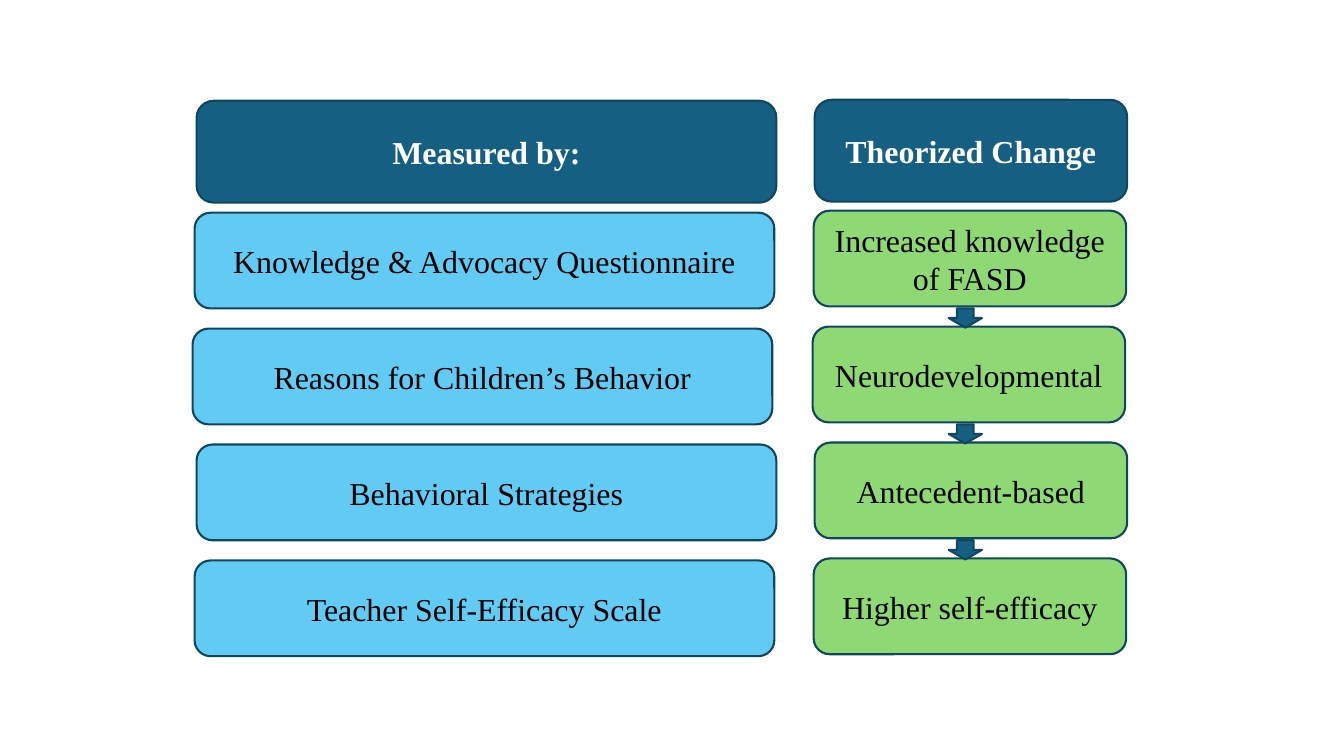
from pptx import Presentation
from pptx.dml.color import RGBColor
from pptx.enum.shapes import MSO_SHAPE
from pptx.enum.text import MSO_ANCHOR, PP_ALIGN
from pptx.util import Pt

ROUNDED = MSO_SHAPE.ROUNDED_RECTANGLE
DOWN_ARROW = MSO_SHAPE.DOWN_ARROW
TOP = MSO_ANCHOR.TOP
MIDDLE = MSO_ANCHOR.MIDDLE
CENTER = PP_ALIGN.CENTER

PX = 9144
TEAL = RGBColor(0x15, 0x60, 0x82)
OUTLINE = RGBColor(0x10, 0x47, 0x60)
SKY = RGBColor(0x61, 0xCB, 0xF4)
GREEN = RGBColor(0x8E, 0xD9, 0x73)
WHITE = RGBColor(0xFF, 0xFF, 0xFF)
BLACK = RGBColor(0x00, 0x00, 0x00)

HEADER_HEIGHT = 101
ROW_HEIGHT = 95
ROW_PITCH = 115

presentation = Presentation()
presentation.slide_width = 1333 * PX
presentation.slide_height = 750 * PX
slide = presentation.slides.add_slide(presentation.slide_layouts[6])


def add_filled_shape(kind, left, top, width, height, color):
    shape = slide.shapes.add_shape(kind, left * PX, top * PX, width * PX, height * PX)
    shape.shadow.inherit = False
    shape.fill.solid()
    shape.fill.fore_color.rgb = color
    shape.line.color.rgb = OUTLINE
    shape.line.width = Pt(1.5)
    return shape


def add_box(left, top, width, height, color, text, font_color, bold=False, anchor=MIDDLE):
    shape = add_filled_shape(ROUNDED, left, top, width, height, color)
    frame = shape.text_frame
    frame.word_wrap = True
    frame.vertical_anchor = anchor
    paragraph = frame.paragraphs[0]
    paragraph.alignment = CENTER
    paragraph.space_after = Pt(5.7)
    run = paragraph.add_run()
    run.text = text
    run.font.name = "Times New Roman"
    run.font.size = Pt(22.8)
    run.font.bold = bold
    run.font.color.rgb = font_color


columns = [
    (195, 100, 575, SKY, "Measured by:", 211, [
        (193, "Knowledge & Advocacy Questionnaire", MIDDLE),
        (191, "Reasons for Children’s Behavior", MIDDLE),
        (195, "Behavioral Strategies", MIDDLE),
        (193, "Teacher Self-Efficacy Scale", MIDDLE),
    ]),
    (808, 99, 310, GREEN, "Theorized Change", 209, [
        (807, "Increased knowledge of FASD", TOP),
        (806, "Neurodevelopmental", MIDDLE),
        (808, "Antecedent-based", MIDDLE),
        (807, "Higher self-efficacy", MIDDLE),
    ]),
]

for header_left, header_top, width, color, header, first_top, rows in columns:
    add_box(header_left, header_top, width, HEADER_HEIGHT, TEAL, header, WHITE, bold=True)
    for index, (left, text, anchor) in enumerate(rows):
        top = first_top + index * ROW_PITCH
        add_box(left, top, width, ROW_HEIGHT, color, text, BLACK, anchor=anchor)

for index in range(3):
    add_filled_shape(DOWN_ARROW, 941, 306 + index * ROW_PITCH, 33, 19, TEAL)

presentation.save("out.pptx")
